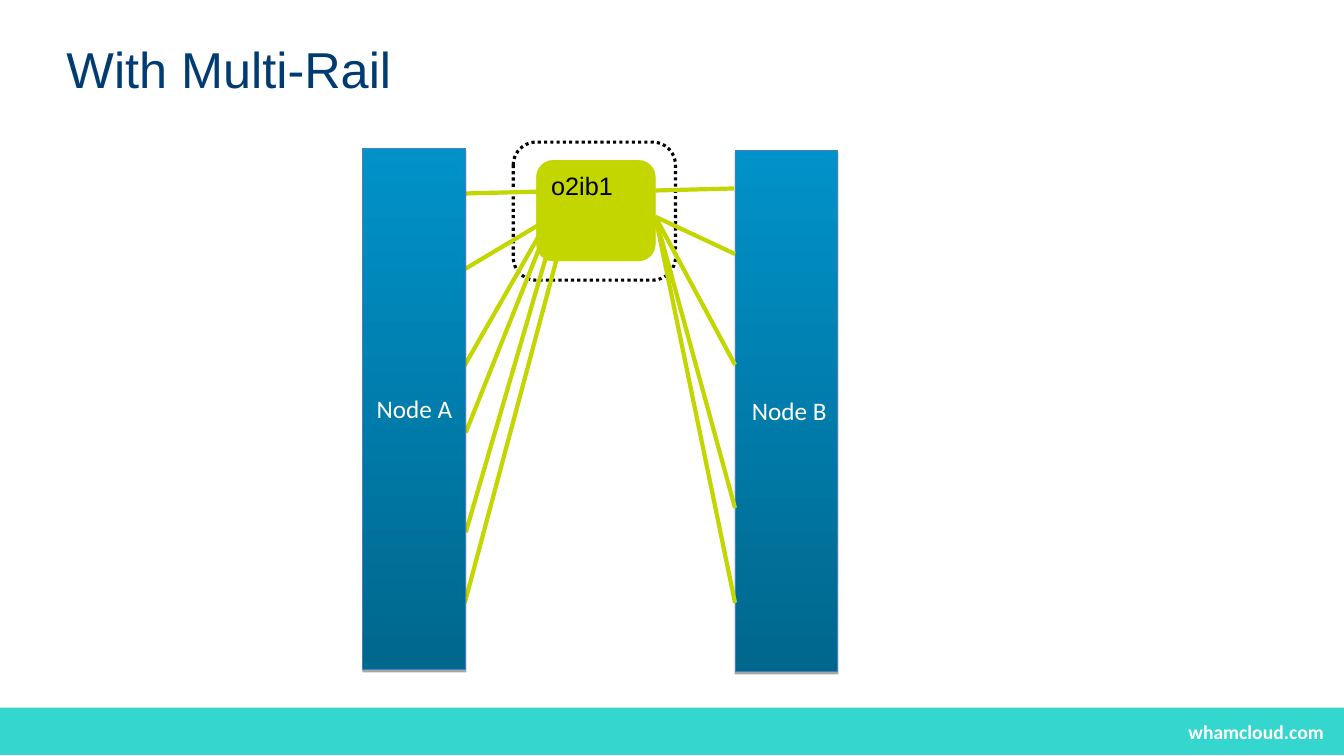
import pptx
import pptx.util
import pptx.dml.color
import pptx.enum.dml
import pptx.enum.shapes
import pptx.enum.text
import lxml.etree

RGB = pptx.dml.color.RGBColor
TEAL = RGB(0x34, 0xD6, 0xCE)
LIME = RGB(0xC3, 0xD6, 0x00)
NAVY = RGB(0x00, 0x3C, 0x71)
DEEP = RGB(0x00, 0x67, 0x8D)
SKY = RGB(0x00, 0x92, 0xC9)
EDGE = RGB(0x4A, 0x7E, 0xBB)
WHITE = RGB(0xFF, 0xFF, 0xFF)
BLACK = RGB(0, 0, 0)

TITLE = "With Multi-Rail"
SITE = "whamcloud.com"
NET = "o2ib1"
WIDE, HIGH = 13.33, 7.5
NODE_W, NODE_H = 1.02, 5.17
NODES = [("Node A", 3.6, 1.47), (" Node B", 7.29, 1.49)]
NET_BOX = (5.32, 1.59, 1.18, 1)
RING_BOX = (5.09, 1.41, 1.61, 1.37)

# Each rail runs from (x, y) to (x, y)
LEFT_RAILS = [
    ((4.6, 1.92), (5.38, 1.9)),
    ((4.61, 2.67), (5.43, 2.18)),
    ((4.6, 3.64), (5.35, 2.33)),
    ((4.62, 4.29), (5.35, 2.46)),
    ((4.62, 5.28), (5.43, 2.5)),
    ((4.61, 5.98), (5.54, 2.5)),
]
HUB = (NET_BOX[0] + NET_BOX[2], 2.15)
FAN_ENDS = [2.52, 3.62, 5.04, 5.98]
RIGHT_RAILS = [((HUB[0], 1.89), (7.28, 1.87))]
RIGHT_RAILS += [(HUB, (NODES[1][1], y)) for y in FAN_ENDS]

SHAPE = pptx.enum.shapes.MSO_SHAPE
ALIGN = pptx.enum.text.PP_ALIGN
ANCHOR = pptx.enum.text.MSO_ANCHOR
DRAW_NS = "http://schemas.openxmlformats.org/drawingml/2006/main"

deck = pptx.Presentation()
deck.slide_width = pptx.util.Inches(WIDE)
deck.slide_height = pptx.util.Inches(HIGH)
slide = deck.slides.add_slide(deck.slide_layouts[6])


def scale(*sizes):
    return [pptx.util.Inches(size) for size in sizes]


def add_tag(parent, name, **attrs):
    return lxml.etree.SubElement(parent, "{%s}%s" % (DRAW_NS, name), attrs)


def write(shape, text, size, font, color, align=ALIGN.LEFT, bold=False,
          anchor=ANCHOR.TOP, wrap=True):
    frame = shape.text_frame
    frame.text = text
    frame.word_wrap = wrap
    frame.vertical_anchor = anchor
    line = frame.paragraphs[0]
    line.alignment = align
    face = line.runs[0].font
    face.size, face.name, face.bold = pptx.util.Pt(size), font, bold
    face.color.rgb = color


def add_box(kind, box, fill=None, edge=None, width=0):
    shape = slide.shapes.add_shape(kind, *scale(*box))
    shape.shadow.inherit = False
    if fill is None:
        shape.fill.background()
    else:
        shape.fill.solid()
        shape.fill.fore_color.rgb = fill
    if edge is None:
        shape.line.fill.background()
    else:
        shape.line.color.rgb = edge
        shape.line.width = pptx.util.Pt(width)
    return shape


def add_node(label, left, top):
    """Draw a tall server bar with a gradient and a thin drop shadow."""
    node = add_box(SHAPE.RECTANGLE, (left, top, NODE_W, NODE_H),
                   edge=EDGE, width=0.75)
    node.fill.gradient()
    node.fill.gradient_angle = 90
    for stop, color in zip(node.fill.gradient_stops, (DEEP, SKY)):
        stop.color.rgb = color
    effects = node._element.spPr.find("{%s}effectLst" % DRAW_NS)
    shade = add_tag(effects, "outerShdw", blurRad="0", dist="22860",
                    dir="5400000", rotWithShape="0")
    tint = add_tag(shade, "srgbClr", val=str(BLACK))
    add_tag(tint, "alpha", val="35000")
    write(node, label, 18, "Calibri", WHITE, ALIGN.CENTER,
          anchor=ANCHOR.MIDDLE)


def add_rails(rails):
    for start, end in rails:
        rail = slide.shapes.add_connector(
            pptx.enum.shapes.MSO_CONNECTOR.STRAIGHT, *scale(*start, *end))
        rail.line.color.rgb = LIME
        rail.line.width = pptx.util.Pt(3)
        add_tag(rail._element.spPr, "effectLst")


add_box(SHAPE.RECTANGLE, (0, 7.02, WIDE, 0.47), TEAL)
site = slide.shapes.add_textbox(*scale(11.26, 7.09, 1.97, 0.33))
write(site, SITE, 14, "Calibri", WHITE, ALIGN.RIGHT, bold=True, wrap=False)

title = slide.shapes.add_textbox(*scale(0.66, 0.38, 12, 0.64))
write(title, TITLE, 36, "Arial", NAVY)
inner = title.text_frame
inner.margin_left = inner.margin_right = 0
inner.margin_top = inner.margin_bottom = 0

ring = add_box(SHAPE.ROUNDED_RECTANGLE, RING_BOX, edge=BLACK, width=2.25)
ring.line.dash_style = pptx.enum.dml.MSO_LINE.ROUND_DOT

add_rails(LEFT_RAILS)
add_node(*NODES[0])
net = add_box(SHAPE.ROUNDED_RECTANGLE, NET_BOX, LIME, LIME, 0.25)
write(net, NET, 18, "Arial", BLACK)
add_node(*NODES[1])
add_rails(RIGHT_RAILS)

deck.save("out.pptx")
